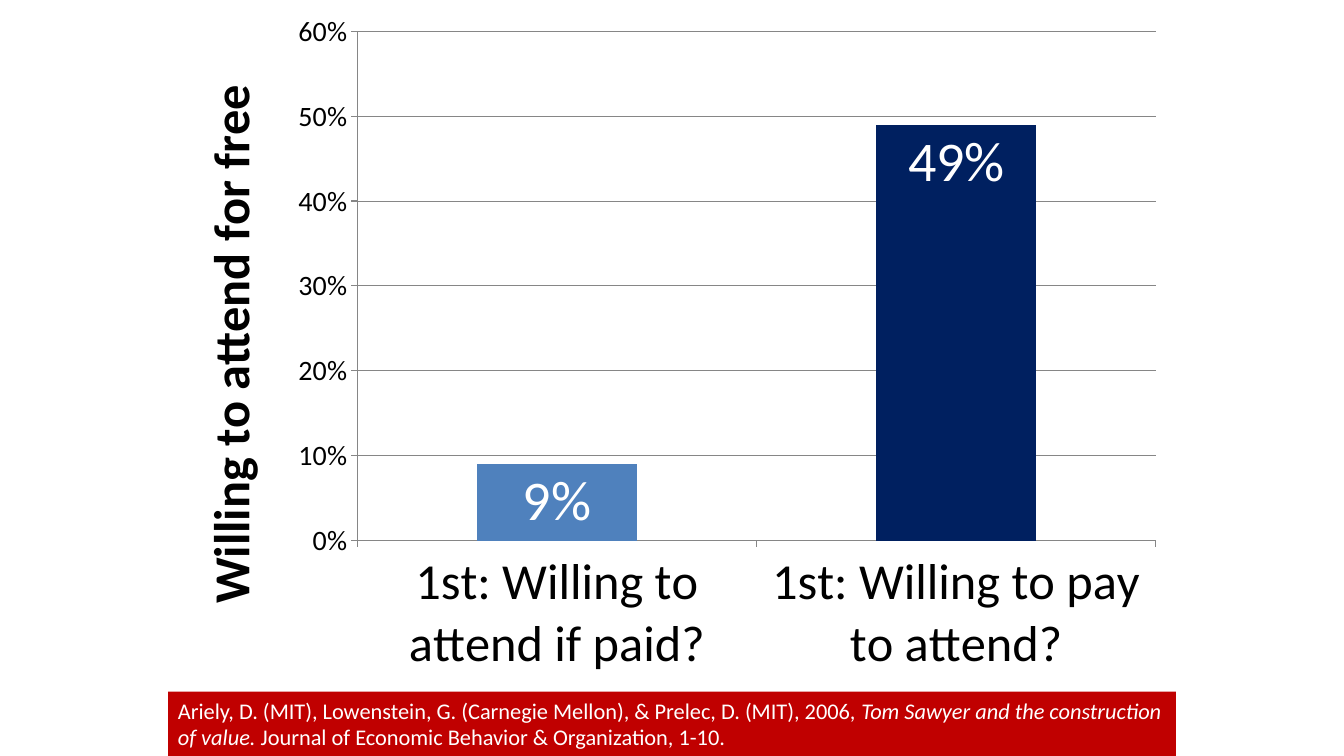
import pptx
import pptx.chart.data
import pptx.dml.color
import pptx.enum.chart
import pptx.enum.shapes
import pptx.enum.text
import pptx.util
from pptx.util import Cm

BLACK = pptx.dml.color.RGBColor(0x00, 0x00, 0x00)
WHITE = pptx.dml.color.RGBColor(0xFF, 0xFF, 0xFF)
GREY = pptx.dml.color.RGBColor(0x86, 0x86, 0x86)
BLUE = pptx.dml.color.RGBColor(0x4F, 0x81, 0xBD)
NAVY = pptx.dml.color.RGBColor(0x00, 0x20, 0x60)
RED = pptx.dml.color.RGBColor(0xC0, 0x00, 0x00)

ANSWERS = {
    "1st: Willing to attend if paid?": (0.09, BLUE),
    "1st: Willing to pay to attend?": (0.49, NAVY),
}
CITATION = [
    ("Ariely, D. (MIT), Lowenstein, G. (Carnegie Mellon), & Prelec, D. (MIT), 2006, ", False),
    ("Tom Sawyer and the construction of value. ", True),
    ("Journal of Economic Behavior & Organization, 1-10.", False),
]


def set_values(target, values):
    """Set each named attribute of the target."""
    for name, value in values.items():
        setattr(target, name, value)


def style_font(font, size, color, **extra):
    """Give a font its face, size, colour and any further formats."""
    set_values(font, {"name": "Calibri", "size": pptx.util.Pt(size), **extra})
    font.color.rgb = color


def style_line(line):
    """Draw a thin grey line."""
    line.color.rgb = GREY
    line.width = pptx.util.Pt(0.75)


def style_axis(axis, size):
    """Format the labels, ticks and line of an axis."""
    set_values(axis, {
        "major_tick_mark": pptx.enum.chart.XL_TICK_MARK.OUTSIDE,
        "minor_tick_mark": pptx.enum.chart.XL_TICK_MARK.NONE,
    })
    style_font(axis.tick_labels.font, size, BLACK)
    style_line(axis.format.line)


def add_answer_chart(page, box):
    """Place the column chart of the answers in the box."""
    data = pptx.chart.data.CategoryChartData(number_format="0%")
    data.categories = list(ANSWERS)
    data.add_series("Series 1", [share for share, color in ANSWERS.values()])
    kind = pptx.enum.chart.XL_CHART_TYPE.COLUMN_CLUSTERED
    chart = page.shapes.add_chart(kind, *box, data).chart
    set_values(chart, {"has_legend": False, "has_title": False})
    style_font(chart.font, 10, BLACK)

    style_axis(chart.category_axis, 36)
    scale = chart.value_axis
    style_axis(scale, 20)
    set_values(scale, {
        "minimum_scale": 0, "maximum_scale": 0.6, "major_unit": 0.1,
        "has_major_gridlines": True,
    })
    set_values(scale.tick_labels, {"number_format": "0%", "number_format_is_linked": False})
    style_line(scale.major_gridlines.format.line)
    caption = scale.axis_title.text_frame
    caption.text = "Willing to attend for free"
    style_font(caption.paragraphs[0].runs[0].font, 36, BLACK, bold=True)

    plot = chart.plots[0]
    set_values(plot, {"gap_width": 150, "vary_by_categories": False})
    series = plot.series[0]
    series.format.fill.solid()
    series.format.fill.fore_color.rgb = BLUE
    for index, (share, color) in enumerate(ANSWERS.values()):
        fill = series.points[index].format.fill
        fill.solid()
        fill.fore_color.rgb = color
    labels = series.data_labels
    set_values(labels, {
        "show_value": True, "number_format": "0%", "number_format_is_linked": False,
        "position": pptx.enum.chart.XL_LABEL_POSITION.INSIDE_END,
    })
    style_font(labels.font, 40, WHITE)


def add_citation(page, box):
    """Place the red citation band in the box."""
    band = page.shapes.add_shape(pptx.enum.shapes.MSO_SHAPE.RECTANGLE, *box)
    band.shadow.inherit = False
    band.fill.solid()
    band.fill.fore_color.rgb = RED
    band.line.fill.background()
    set_values(band.text_frame, {
        "word_wrap": True,
        "auto_size": pptx.enum.text.MSO_AUTO_SIZE.SHAPE_TO_FIT_TEXT,
        "vertical_anchor": pptx.enum.text.MSO_ANCHOR.TOP,
    })
    para = band.text_frame.paragraphs[0]
    para.alignment = pptx.enum.text.PP_ALIGN.LEFT
    for words, italic in CITATION:
        span = para.add_run()
        span.text = words
        style_font(span.font, 16, WHITE, italic=italic)


def main():
    """Build the slide and save it."""
    deck = pptx.Presentation()
    set_values(deck, {"slide_width": Cm(33.87), "slide_height": Cm(19.05)})
    page = deck.slides.add_slide(deck.slide_layouts[6])
    width = Cm(25.4)
    left = (deck.slide_width - width) // 2
    band_height = Cm(1.62)
    add_answer_chart(page, (left, 0, width, Cm(17.35)))
    add_citation(page, (left, deck.slide_height - band_height, width, band_height))
    deck.save("out.pptx")


if __name__ == "__main__":
    main()
